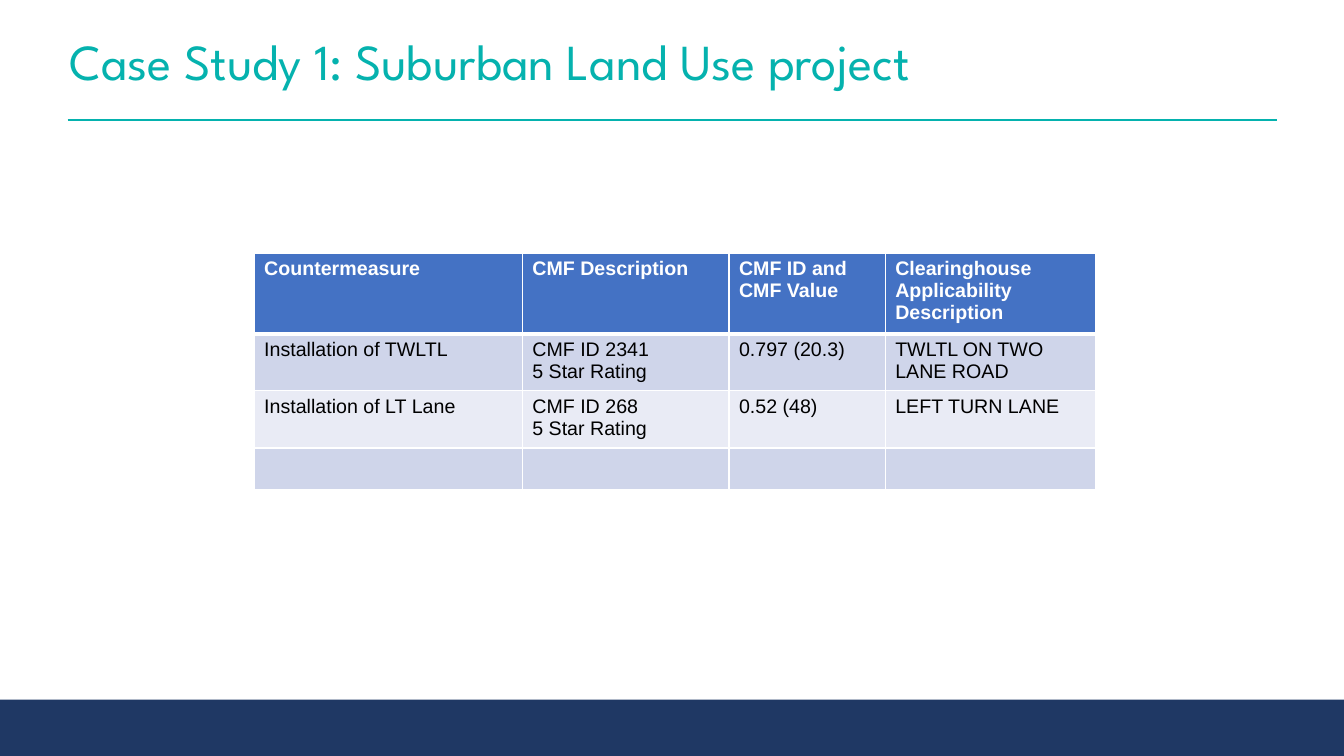
from lxml.etree import SubElement
from pptx import Presentation
from pptx.dml.color import RGBColor
from pptx.enum.shapes import MSO_CONNECTOR, MSO_SHAPE
from pptx.enum.text import MSO_ANCHOR
from pptx.oxml import parse_xml
from pptx.oxml.ns import nsdecls, qn
from pptx.util import Inches, Pt

COLORS = {
    "navy": "1F3864",
    "teal": "05B2AE",
    "header": "4472C4",
    "band": "CFD5EA",
    "light": "E9EBF5",
    "white": "FFFFFF",
    "black": "000000",
}
TITLE_FORMAT = {"name": "League Spartan", "size": Pt(36), "bold": False}
HEADER_FORMAT = {"name": "Arial", "size": Pt(14), "bold": True}
BODY_FORMAT = {"name": "Arial", "size": Pt(14), "bold": False}

COLUMN_WIDTHS = [2.66, 2.05, 1.55, 2.09]
ROW_HEIGHTS = [0.75, 0.54, 0.54, 0.41]
COUNTERMEASURES = [
    ["Countermeasure", "CMF Description", "CMF ID and CMF Value",
     "Clearinghouse Applicability Description"],
    ["Installation of TWLTL", "CMF ID 2341\n5 Star Rating", "0.797 (20.3)",
     "TWLTL ON TWO LANE ROAD"],
    ["Installation of LT Lane", "CMF ID 268\n5 Star Rating", "0.52 (48)",
     "LEFT TURN LANE"],
    ["", "", "", ""],
]


def rgb(color):
    return RGBColor.from_string(COLORS[color])


def format_font(paragraph, values, color):
    for attribute, value in values.items():
        setattr(paragraph.font, attribute, value)
    paragraph.font.color.rgb = rgb(color)


def add_footer(slide):
    footer = slide.shapes.add_shape(
        MSO_SHAPE.RECTANGLE, Inches(0), Inches(6.94), Inches(13.33), Inches(0.56))
    footer.shadow.inherit = False
    footer.fill.solid()
    footer.fill.fore_color.rgb = rgb("navy")
    footer.line.fill.background()


def add_rule(slide):
    rule = slide.shapes.add_connector(
        MSO_CONNECTOR.STRAIGHT, Inches(0.67), Inches(1.19), Inches(12.67), Inches(1.19))
    rule.line.color.rgb = rgb("teal")
    rule.line.width = Pt(2)
    SubElement(rule.element.spPr, qn("a:effectLst"))


def add_title(slide, text):
    title = slide.shapes.add_textbox(
        Inches(0.59), Inches(0.28), Inches(12.22), Inches(0.72))
    frame = title.text_frame
    frame.word_wrap = True
    frame.vertical_anchor = MSO_ANCHOR.MIDDLE
    frame.text = text
    paragraph = frame.paragraphs[0]
    paragraph.line_spacing = 0.9
    format_font(paragraph, TITLE_FORMAT, "teal")


def set_borders(cell, widths):
    properties = cell._tc.get_or_add_tcPr()
    for position, (side, width) in enumerate(widths.items()):
        properties.insert(position, parse_xml(
            f'<a:ln{side} {nsdecls("a")} w="{Pt(width)}"><a:solidFill>'
            f'<a:srgbClr val="{COLORS["white"]}"/></a:solidFill></a:ln{side}>'))


def fill_cell(cell, text, row):
    cell.fill.solid()
    cell.fill.fore_color.rgb = rgb(
        "header" if row == 0 else "band" if row % 2 else "light")
    set_borders(cell, {"L": 1, "R": 1, "T": 3 if row == 1 else 1,
                       "B": 3 if row == 0 else 1})
    if text:
        cell.text = text
        for paragraph in cell.text_frame.paragraphs:
            if row == 0:
                format_font(paragraph, HEADER_FORMAT, "white")
            else:
                format_font(paragraph, BODY_FORMAT, "black")


def add_countermeasures(slide):
    table = slide.shapes.add_table(
        len(ROW_HEIGHTS), len(COLUMN_WIDTHS), Inches(2.52), Inches(2.51),
        Inches(sum(COLUMN_WIDTHS)), Inches(sum(ROW_HEIGHTS))).table
    for column, width in zip(table.columns, COLUMN_WIDTHS):
        column.width = Inches(width)
    for row, height in zip(table.rows, ROW_HEIGHTS):
        row.height = Inches(height)
    for row, texts in enumerate(COUNTERMEASURES):
        for column, text in enumerate(texts):
            fill_cell(table.cell(row, column), text, row)


def main():
    presentation = Presentation()
    presentation.slide_width = Inches(13.33)
    presentation.slide_height = Inches(7.5)
    slide = presentation.slides.add_slide(presentation.slide_layouts[6])
    add_footer(slide)
    add_rule(slide)
    add_title(slide, "Case Study 1: Suburban Land Use project")
    add_countermeasures(slide)
    presentation.save("out.pptx")


if __name__ == "__main__":
    main()
